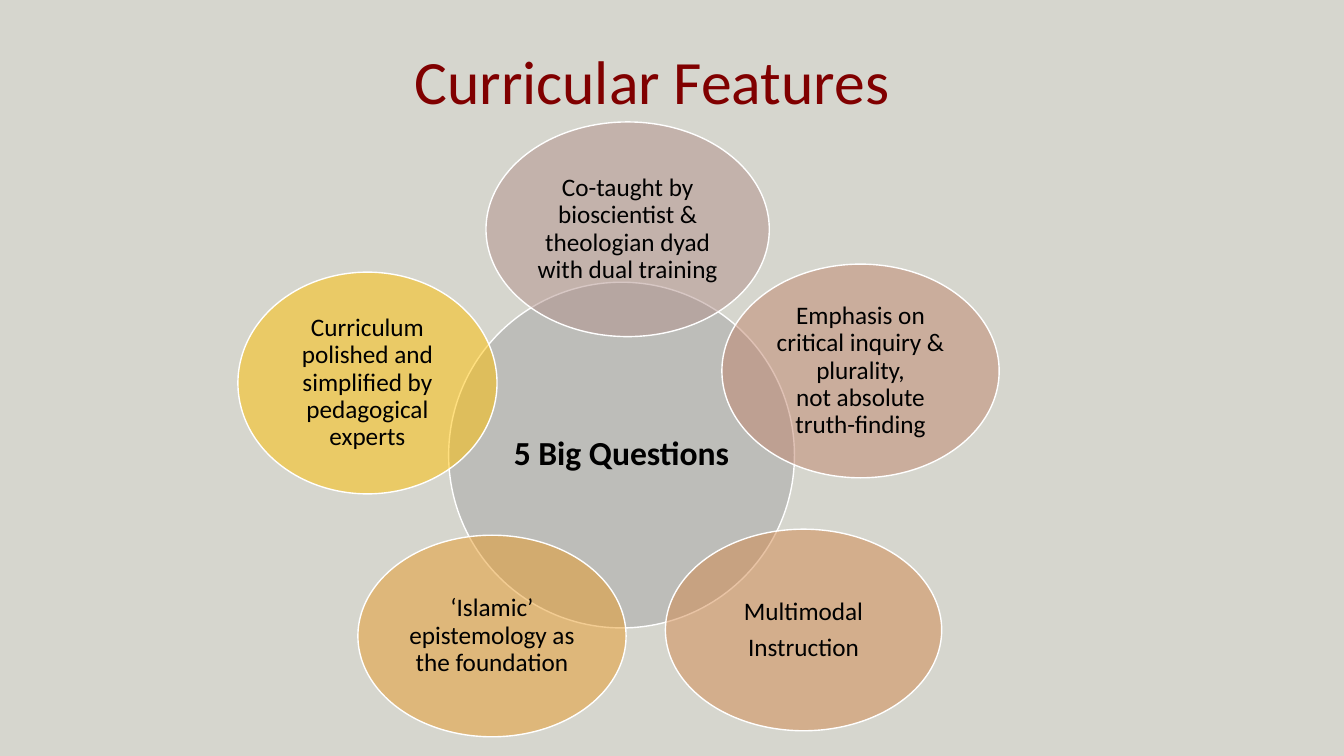
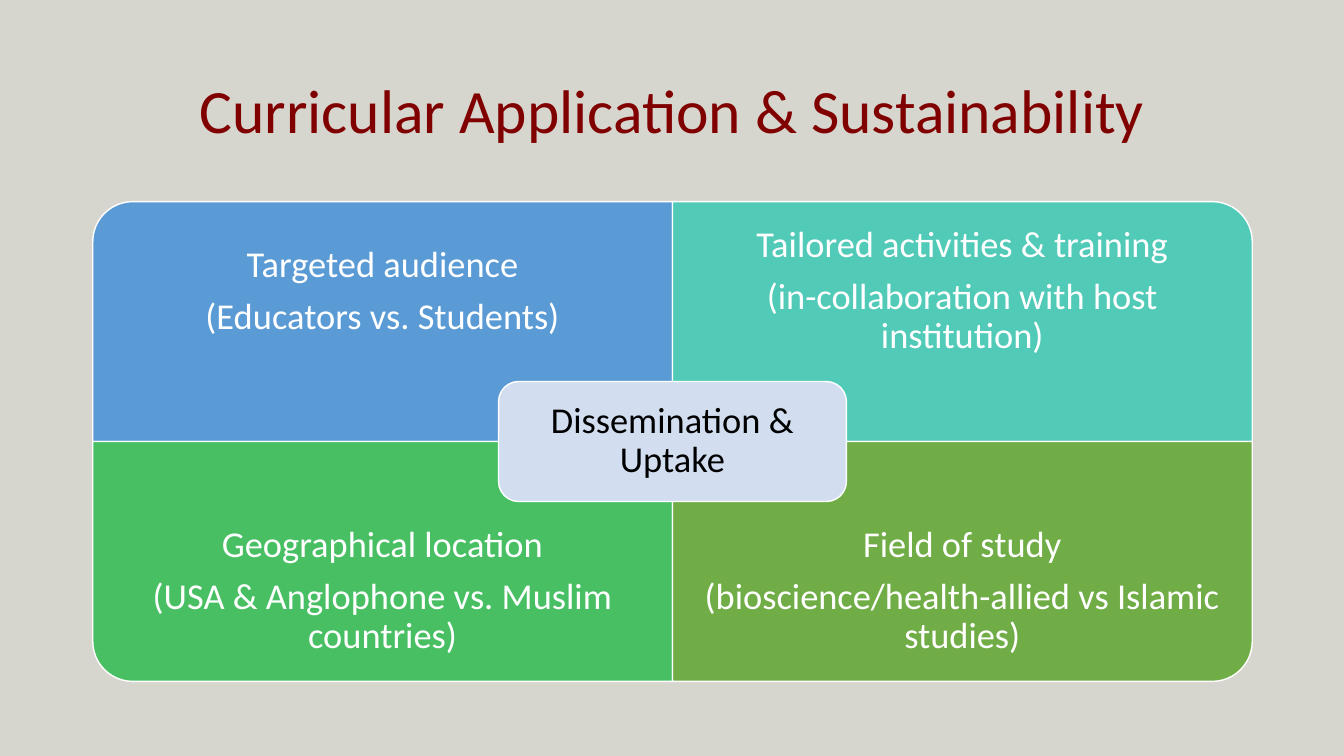
"""Build two slides on a curriculum: its features, and its application."""
from dataclasses import dataclass

from lxml.etree import SubElement
from pptx import Presentation
from pptx.dml.color import RGBColor
from pptx.enum.shapes import MSO_SHAPE
from pptx.enum.text import MSO_ANCHOR, PP_ALIGN
from pptx.oxml.ns import qn
from pptx.util import Inches, Pt


@dataclass(frozen=True)
class Theme:
    font: str = "Calibri"
    back: str = "D6D6CE"
    title: str = "800000"
    dark: str = "000000"
    light: str = "FFFFFF"
    hub: str = "A5A5A5"
    badge: str = "D2DEEF"
    title_size: int = 44
    quad_size: int = 26
    hub_size: int = 24
    petal_size: int = 18
    line_spacing: float = 0.9
    para_gap: float = 0.35
    alpha: int = 50


T = Theme()
SLIDE_W, SLIDE_H = 13.33, 7.5
TITLE_W, TITLE_H = 11.5, 1.45

FEATURES = {
    "title": ("Curricular Features", (0.72, 0.11)),
    "hub": ("5 Big Questions", (4.45, 2.8, 3.43, 3.43)),
    "petals": [
        (["Co-taught by bioscientist & theologian dyad with dual training"],
         "B1908A", (4.82, 1.21, 2.81, 2.13)),
        (["Emphasis on critical inquiry & plurality,\nnot absolute truth-finding"],
         "C0856C", (7.16, 2.62, 2.75, 2.12)),
        (["Multimodal", "Instruction"],
         "D2884B", (6.6, 5.25, 2.74, 2)),
        (["‘Islamic’ epistemology as the foundation"],
         "E79A27", (3.55, 5.31, 2.66, 2)),
        (["Curriculum polished and simplified by pedagogical experts"],
         "FFC000", (2.36, 2.7, 2.57, 2.2)),
    ],
}

APPLICATION = {
    "title": ("Curricular Application & Sustainability", (0.92, 0.4)),
    "grid": (0.92, 2, 5.75, 2.38),
    "badge": "Dissemination & Uptake",
    "quads": [
        (["Targeted audience", "(Educators vs. Students)"], "5B9BD5", 270),
        (["Tailored activities & training",
          "(in-collaboration with host institution)"], "52CAB8", 0),
        (["Geographical location",
          "(USA & Anglophone vs. Muslim countries)"], "49BF64", 180),
        (["Field of study",
          "(bioscience/health-allied vs Islamic studies)"], "70AD47", 90),
    ],
}


def write(sp, paras, size, color, inset=None, bold=False, gap=T.para_gap):
    tf = sp.text_frame
    tf.word_wrap = True
    tf.vertical_anchor = MSO_ANCHOR.MIDDLE
    if inset is not None:
        tf.margin_left = tf.margin_right = Inches(inset)
        tf.margin_top = tf.margin_bottom = Inches(inset)
    for i, text in enumerate(paras):
        p = tf.add_paragraph() if i else tf.paragraphs[0]
        p.alignment = PP_ALIGN.CENTER
        p.line_spacing = T.line_spacing
        p.space_after = Pt(size * gap)
        for j, line in enumerate(text.split("\n")):
            if j:
                p.add_line_break()
            r = p.add_run()
            r.text = line
            r.font.name, r.font.size, r.font.bold = T.font, Pt(size), bold
            r.font.color.rgb = RGBColor.from_string(color)


def add_text(s, box, paras, size, color, **style):
    write(s.shapes.add_textbox(*map(Inches, box)), paras, size, color, **style)


def add_shape(s, kind, box, fill, alpha=None):
    sp = s.shapes.add_shape(kind, *map(Inches, box))
    sp.shadow.inherit = False
    sp.fill.solid()
    sp.fill.fore_color.rgb = RGBColor.from_string(fill)
    sp.line.color.rgb = RGBColor.from_string(T.light)
    sp.line.width = Pt(1)
    if alpha:
        clr = sp.fill._xPr.find(qn("a:solidFill"))[0]
        SubElement(clr, qn("a:alpha")).set("val", str(alpha * 1000))
    return sp


def add_slide(prs, title, corner):
    s = prs.slides.add_slide(prs.slide_layouts[6])
    add_text(s, (*corner, TITLE_W, TITLE_H), [title], T.title_size, T.title, gap=0)
    return s


def build_features(prs):
    s = add_slide(prs, *FEATURES["title"])
    text, box = FEATURES["hub"]
    hub = add_shape(s, MSO_SHAPE.OVAL, box, T.hub, T.alpha)
    write(hub, [text], T.hub_size, T.dark, inset=0.03, bold=True)
    for paras, color, box in FEATURES["petals"]:
        petal = add_shape(s, MSO_SHAPE.OVAL, box, color, T.alpha)
        write(petal, paras, T.petal_size, T.dark, inset=0.03)


def build_application(prs):
    s = add_slide(prs, *APPLICATION["title"])
    left, top, w, h = APPLICATION["grid"]
    for i, (paras, color, turn) in enumerate(APPLICATION["quads"]):
        row, col = divmod(i, 2)
        x, y = left + col * w, top + row * h
        fw, fh = (h, w) if turn % 180 else (w, h)
        frame = (x + (w - fw) / 2, y + (h - fh) / 2, fw, fh)
        quad = add_shape(s, MSO_SHAPE.ROUND_1_RECTANGLE, frame, color)
        quad.rotation = turn
        add_text(s, (x, y + row * h / 4, w, h * 3 / 4), paras,
                 T.quad_size, T.light, inset=0.2)
    bw, bh = w * 0.6, h / 2
    box = (left + w - bw / 2, top + h - bh / 2, bw, bh)
    badge = add_shape(s, MSO_SHAPE.ROUNDED_RECTANGLE, box, T.badge)
    write(badge, [APPLICATION["badge"]], T.quad_size, T.dark, inset=0.11)


def main():
    prs = Presentation()
    prs.slide_width, prs.slide_height = Inches(SLIDE_W), Inches(SLIDE_H)
    back = prs.slide_master.background.fill
    back.solid()
    back.fore_color.rgb = RGBColor.from_string(T.back)
    build_features(prs)
    build_application(prs)
    prs.save("out.pptx")


if __name__ == "__main__":
    main()
